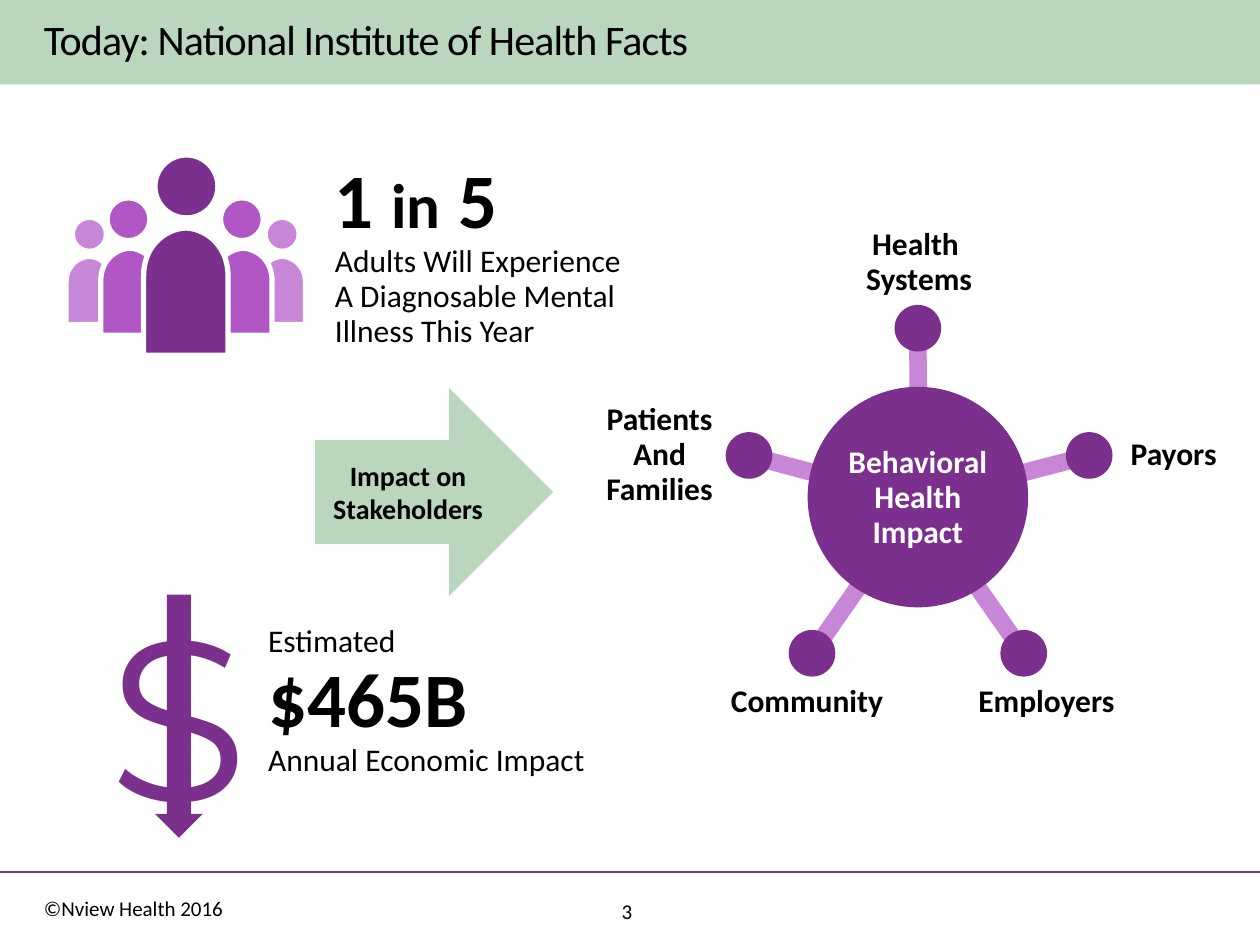
from lxml import etree
from pptx import Presentation
from pptx.dml.color import RGBColor
from pptx.enum.shapes import MSO_CONNECTOR, MSO_SHAPE
from pptx.enum.text import MSO_ANCHOR, MSO_AUTO_SIZE, PP_ALIGN
from pptx.oxml.ns import qn
from pptx.util import Inches, Pt

RECT, OVAL = MSO_SHAPE.RECTANGLE, MSO_SHAPE.OVAL
RIGHT, DOWN = MSO_SHAPE.RIGHT_ARROW, MSO_SHAPE.DOWN_ARROW
LEFT, CENTER = PP_ALIGN.LEFT, PP_ALIGN.CENTER
TOP, MIDDLE = MSO_ANCHOR.TOP, MSO_ANCHOR.MIDDLE
STRAIGHT, GROW = MSO_CONNECTOR.STRAIGHT, MSO_AUTO_SIZE.SHAPE_TO_FIT_TEXT

PURPLE, ORCHID, LILAC = "7A308C", "B057C5", "C786D6"
GREEN, BLACK, WHITE = "BAD6BD", "000000", "FFFFFF"
TIGHT = Pt(20)
NODE = 0.37

# head left, top, size; body left, top, width, height; colour, outline
PEOPLE = [
    ((2.11, 1.73, 0.26), (2.06, 2.04, 0.36, 0.53), LILAC, 2.25),
    ((0.58, 1.73, 0.26), (0.53, 2.04, 0.36, 0.53), LILAC, 2.25),
    ((1.75, 1.57, 0.34), (1.70, 1.97, 0.46, 0.69), ORCHID, 3),
    ((0.85, 1.57, 0.34), (0.80, 1.97, 0.46, 0.69), ORCHID, 3),
    ((1.23, 1.23, 0.50), (1.14, 1.81, 0.67, 1.01), PURPLE, 3),
]
# body outline as shares of its size, and the handles of its two curves
OUTLINE = [(0, 1), (0, 0.38), (0.5, 0), (1, 0.38), (1, 1)]
HANDLES = [[(0, 0.1), (0.33, 0)], [(0.67, 0), (1, 0.1)]]

# spoke start, node left and top, label left and top, label lines
SPOKES = [
    ((7.29, 3.80), (7.10, 2.42), (6.53, 1.75), ["Health ", "Systems"]),
    ((7.21, 4.09), (6.26, 5.00), (5.64, 5.38), ["Community"]),
    ((7.36, 4.09), (7.94, 5.00), (7.54, 5.38), ["Employers"]),
    ((7.36, 3.95), (8.46, 3.43), (8.55, 3.42), ["Payors"]),
    ((7.20, 3.95), (5.76, 3.43), (4.47, 3.14), ["Patients", "And", "Families"]),
]


def rgb(color):
    return RGBColor.from_string(color)


def paint(shape, fill, line=None, width=0):
    shape.shadow.inherit = False
    shape.fill.solid()
    shape.fill.fore_color.rgb = rgb(fill)
    if line:
        shape.line.color.rgb = rgb(line)
        shape.line.width = Pt(width)
    else:
        shape.line.fill.background()


def add_shape(slide, kind, box, fill, line=None, width=0):
    shape = slide.shapes.add_shape(kind, *map(Inches, box))
    paint(shape, fill, line, width)
    return shape


def add_line(slide, start, end, color, width):
    line = slide.shapes.add_connector(STRAIGHT, *map(Inches, start + end))
    line.line.color.rgb = rgb(color)
    line.line.width = Pt(width)
    etree.SubElement(line._element.spPr, qn("a:effectLst"))


def write(shape, paras, align=LEFT, color=BLACK, face="Calibri", anchor=TOP,
          inset=(0.1, 0.05, 0.1, 0.05)):
    """Fill a shape from (line spacing, [(text, size, bold), ...]) items."""
    frame = shape.text_frame
    sides = ("margin_left", "margin_top", "margin_right", "margin_bottom")
    look = dict(zip(sides, map(Inches, inset)))
    look.update(word_wrap=True, vertical_anchor=anchor)
    for key, value in look.items():
        setattr(frame, key, value)
    for i, (gap, runs) in enumerate(paras):
        para = frame.add_paragraph() if i else frame.paragraphs[0]
        para.alignment = align
        para.line_spacing = gap
        for text, size, bold in runs:
            run = para.add_run()
            run.text = text
            style = {"name": face, "size": Pt(size), "bold": bold}
            for key, value in style.items():
                setattr(run.font, key, value)
            run.font.color.rgb = rgb(color)


def add_text(slide, box, paras, **look):
    shape = slide.shapes.add_textbox(*map(Inches, box))
    write(shape, paras, **look)
    shape.text_frame.auto_size = GROW
    return shape


def stack(lines, size=18, bold=True):
    """Closely set paragraphs of one style."""
    return [(TIGHT, [(line, size, bold)]) for line in lines]


def add_body(slide, box, fill, width):
    """Draw a body whose two upper edges are bent into a dome."""
    left, top, wide, high = map(Inches, box)
    spots = [(left + round(x * wide), top + round(y * high))
             for x, y in OUTLINE]
    pen = slide.shapes.build_freeform(*spots[0])
    pen.add_line_segments(spots[1:], close=True)
    body = pen.convert_to_shape()
    edges = list(body._element.iter(qn("a:lnTo")))[1:3]
    for edge, pair in zip(edges, HANDLES):
        edge.tag = qn("a:cubicBezTo")
        for i, (x, y) in enumerate(pair):
            spot = etree.Element(qn("a:pt"), x=str(round(x * wide)),
                                 y=str(round(y * high)))
            edge.insert(i, spot)
    paint(body, fill, WHITE, width)


def add_people(slide):
    for (left, top, size), box, fill, width in PEOPLE:
        add_body(slide, box, fill, width)
        add_shape(slide, OVAL, (left, top, size, size), fill, WHITE, width)


def add_wheel(slide):
    for start, (x, y), _, _ in SPOKES:
        add_line(slide, (x + NODE / 2, y + NODE / 2), start, LILAC, 10)
    hub = add_shape(slide, OVAL, (6.41, 3.07, 1.75, 1.75), PURPLE)
    write(hub, stack(["Behavioral", "Health", "Impact"]), align=CENTER,
          color=WHITE, anchor=MIDDLE, inset=(0, 0, 0, 0))
    for _, node, spot, lines in SPOKES:
        add_shape(slide, OVAL, (*node, NODE, NODE), PURPLE)
        add_text(slide, (*spot, 1.53, 0.1 + 0.28 * len(lines)),
                 stack(lines), align=CENTER)


def add_frame(slide):
    """Title band, footer rule and footer."""
    add_shape(slide, RECT, (0, 0, 10, 0.67), GREEN)
    add_line(slide, (0, 6.92), (10, 6.92), PURPLE, 1.5)
    add_text(slide, (0.25, 7.06, 3.17, 0.3),
             [(None, [("©Nview Health 2016", 12, False)])])
    add_text(slide, (3.39, 7.08, 3.17, 0.3),
             [(None, [("3", 12, False)])], align=CENTER)
    title = add_text(
        slide, (0.25, 0.15, 8.83, 0.41),
        [(0.9, [("Today: National Institute of Health Facts", 24, False)])],
        inset=(0.1, 0, 0.1, 0.05))
    run = title.text_frame.paragraphs[0].runs[0]
    run.font._element.set("spc", "-50")


def add_cost(slide):
    add_text(slide, (2.03, 4.88, 3, 1.36), [
        (None, [("Estimated", 18, False)]),
        (Pt(48), [("$465B", 44, True)]),
        (TIGHT, [("Annual Economic Impact", 18, False)])])
    add_text(slide, (0.42, 4.51, 2, 2.29), [(None, [("$", 130, False)])],
             align=CENTER, color=PURPLE, face="Montserrat")
    add_shape(slide, DOWN, (1.23, 4.72, 0.38, 1.93), PURPLE)


def main():
    deck = Presentation()
    deck.slide_width, deck.slide_height = Inches(10), Inches(7.5)
    slide = deck.slides.add_slide(deck.slide_layouts[6])
    add_frame(slide)
    add_people(slide)
    facts = ["Adults Will Experience", "A Diagnosable Mental",
             "Illness This Year"]
    odds = [("1 ", 44, True), ("in", 36, True), (" 5", 44, True)]
    add_text(slide, (2.56, 1.15, 3, 1.68),
             [(None, odds), *stack(facts, bold=False)])
    arrow = add_shape(slide, RIGHT, (2.5, 3.08, 1.89, 1.65), GREEN)
    write(arrow, [(None, [("Impact on Stakeholders", 16, True)])],
          align=CENTER, anchor=MIDDLE)
    add_wheel(slide)
    add_cost(slide)
    deck.save("out.pptx")


if __name__ == "__main__":
    main()
